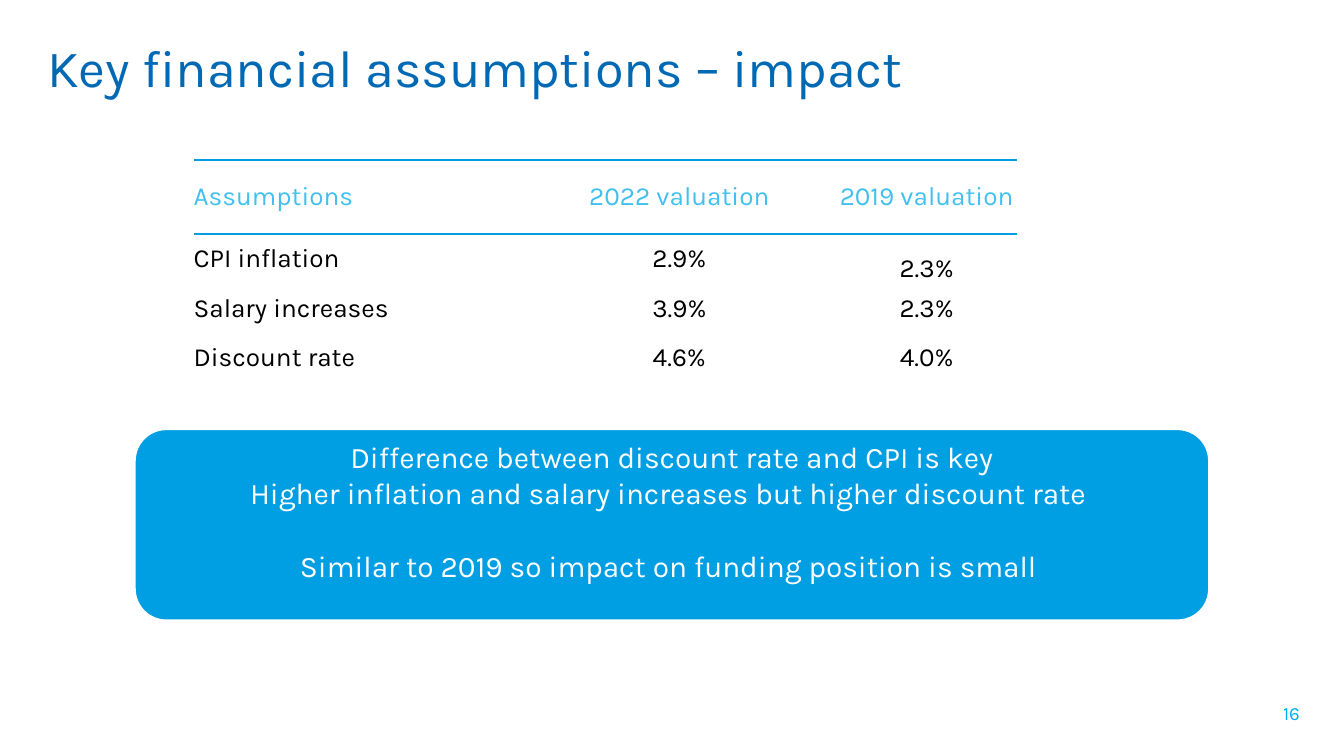
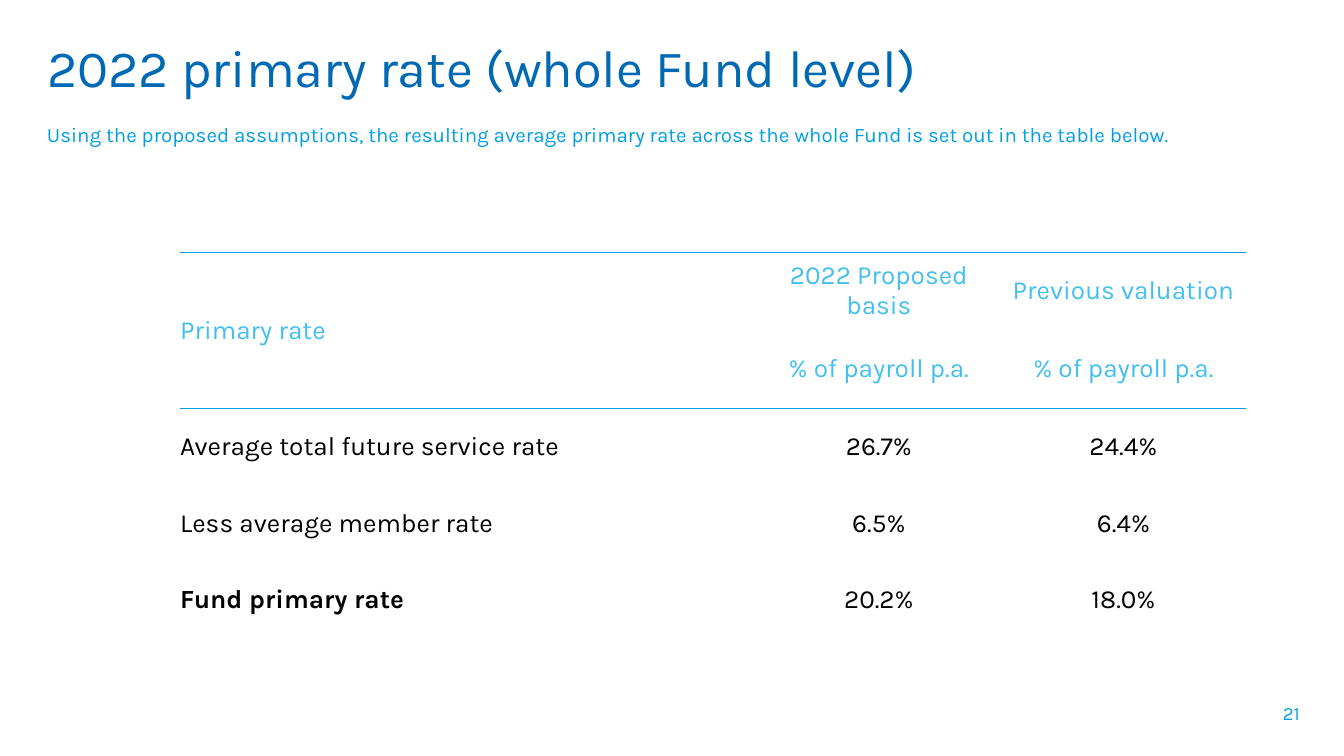
"""Builds two valuation slides: financial assumptions and the primary rate."""
from lxml import etree
from pptx import Presentation
from pptx import util as u
from pptx.dml.color import RGBColor
from pptx.enum import shapes, text
from pptx.oxml import ns

FONT = "Karla"
TITLE_BLUE, BLUE, HEADER_BLUE = "0069B4", "009FE3", "41C0F0"
PAGE_BLUE, WHITE, BLACK = "00ADEE", "FFFFFF", "000000"
LEFT, CENTER, RIGHT = text.PP_ALIGN.LEFT, text.PP_ALIGN.CENTER, text.PP_ALIGN.RIGHT
TOP, MIDDLE, BOTTOM = text.MSO_ANCHOR.TOP, text.MSO_ANCHOR.MIDDLE, text.MSO_ANCHOR.BOTTOM
NO_STYLE = "{2D5ABB26-0587-4C30-8999-92F81FD0307C}"


def color(hex_value):
    return RGBColor.from_string(hex_value)


def write(frame, lines, size, hex_value, alignment=LEFT, anchor=TOP, bold=False):
    frame.word_wrap = True
    frame.vertical_anchor = anchor
    for index, line in enumerate(lines):
        paragraph = frame.add_paragraph() if index else frame.paragraphs[0]
        paragraph.alignment = alignment
        run = paragraph.add_run()
        run.text = line
        run.font.name = FONT
        run.font.size = u.Pt(size)
        run.font.bold = bold
        run.font.color.rgb = color(hex_value)
    return frame


pages = [
    {
        "title": "Key financial assumptions – impact",
        "number": ("16", PAGE_BLUE),
        "position": (1.44, 1.19),
        "height": 1.65,
        "columns": [2.45, 2.33, 1.35],
        "heights": [0.55, 0.37, 0.37, 0.37],
        "header_rows": 1,
        "rows": [
            ["Assumptions", "2022 valuation", "2019 valuation"],
            ["CPI inflation", "2.9%", "2.3%"],
            ["Salary increases", "3.9%", "2.3%"],
            ["Discount rate", "4.6%", "4.0%"],
        ],
        "bottom_cells": [(1, 2)],
        "bold_cells": [],
    },
    {
        "title": "2022 primary rate (whole Fund level)",
        "number": ("21", BLUE),
        "position": (1.34, 1.88),
        "height": 2.89,
        "columns": [4.29, 1.82, 1.82],
        "heights": [0.57, 0.59, 0.57, 0.57, 0.57],
        "header_rows": 2,
        "rows": [
            ["Primary rate", "2022 Proposed basis", "Previous valuation"],
            ["", "% of payroll p.a.", "% of payroll p.a."],
            ["Average total future service rate", "26.7%", "24.4%"],
            ["Less average member rate", "6.5%", "6.4%"],
            ["Fund primary rate", "20.2%", "18.0%"],
        ],
        "bottom_cells": [],
        "bold_cells": [(4, 0)],
    },
]

presentation = Presentation()
presentation.slide_width = u.Inches(10)
presentation.slide_height = u.Inches(10) * 9 // 16
slides = []

for page in pages:
    slide = presentation.slides.add_slide(presentation.slide_layouts[5])
    slides.append(slide)
    title = slide.shapes.title
    title.left, title.top = u.Inches(0.25), u.Inches(0.21)
    title.width, title.height = u.Inches(9.42), u.Inches(0.63)
    title.text_frame.auto_size = text.MSO_AUTO_SIZE.NONE
    write(title.text_frame, [page["title"]], 28, TITLE_BLUE)
    title.text_frame.paragraphs[0].space_after = u.Pt(6)

    number, number_color = page["number"]
    number_box = slide.shapes.add_textbox(u.Inches(9.27), u.Inches(5.17), u.Inches(0.5), u.Inches(0.3))
    write(number_box.text_frame, [number], 10, number_color, RIGHT)

    rows, columns, heights = page["rows"], page["columns"], page["heights"]
    left, top = page["position"]
    table_frame = slide.shapes.add_table(
        len(rows), len(columns), u.Inches(left), u.Inches(top),
        u.Inches(sum(columns)), u.Inches(page["height"]))
    table = table_frame.table
    table.first_row = table.horz_banding = False
    table._tbl.tblPr.find(ns.qn("a:tableStyleId")).text = NO_STYLE
    for column, width in zip(table.columns, columns):
        column.width = u.Inches(width)
    for row, height in zip(table.rows, heights):
        row.height = u.Inches(height)
    table_frame.height = u.Inches(page["height"])

    header_rows = page["header_rows"]
    if header_rows > 1:
        table.cell(0, 0).merge(table.cell(header_rows - 1, 0))
    for row_index, row in enumerate(rows):
        for column_index, value in enumerate(row):
            cell = table.cell(row_index, column_index)
            cell.margin_left = cell.margin_right = cell.margin_top = cell.margin_bottom = 0
            properties = cell._tc.get_or_add_tcPr()
            ruled = {
                "a:lnL": False,
                "a:lnR": False,
                "a:lnT": row_index in (0, header_rows),
                "a:lnB": row_index + cell.span_height == header_rows,
            }
            for edge, is_ruled in ruled.items():
                line = etree.SubElement(properties, ns.qn(edge), w=str(u.Pt(1)))
                if is_ruled:
                    fill = etree.SubElement(line, ns.qn("a:solidFill"))
                    etree.SubElement(fill, ns.qn("a:srgbClr"), val=BLUE)
                else:
                    etree.SubElement(line, ns.qn("a:noFill"))
            cell.fill.solid()
            cell.fill.fore_color.rgb = color(WHITE)
            position = (row_index, column_index)
            cell.vertical_anchor = BOTTOM if position in page["bottom_cells"] else MIDDLE
            if value:
                write(cell.text_frame, [value], 14,
                      HEADER_BLUE if row_index < header_rows else BLACK,
                      CENTER if column_index else LEFT,
                      cell.vertical_anchor, position in page["bold_cells"])

assumptions_slide, rate_slide = slides

message = assumptions_slide.shapes.add_shape(
    shapes.MSO_SHAPE.ROUNDED_RECTANGLE, u.Inches(1), u.Inches(3.19), u.Inches(8), u.Inches(1.43))
message.shadow.inherit = False
message.fill.solid()
message.fill.fore_color.rgb = color(BLUE)
message.line.color.rgb = color(WHITE)
message.line.width = u.Pt(1.5)
message_frame = write(message.text_frame, [
    "Difference between discount rate and CPI is key",
    "Higher inflation and salary increases but higher discount rate ",
    "Similar to 2019 so impact on funding position is small ",
], 16, WHITE, CENTER, MIDDLE)
message_frame.margin_bottom = u.Inches(0.25)
message_frame.paragraphs[2].space_before = u.Pt(20)

subtitle = rate_slide.shapes.add_textbox(u.Inches(0.25), u.Inches(0.86), u.Inches(9.42), u.Inches(0.38))
write(subtitle.text_frame, [
    "Using the proposed assumptions, the resulting average primary rate "
    "across the whole Fund is set out in the table below."
], 11, BLUE)
subtitle.text_frame.paragraphs[0].space_after = u.Pt(6)

presentation.save("out.pptx")
